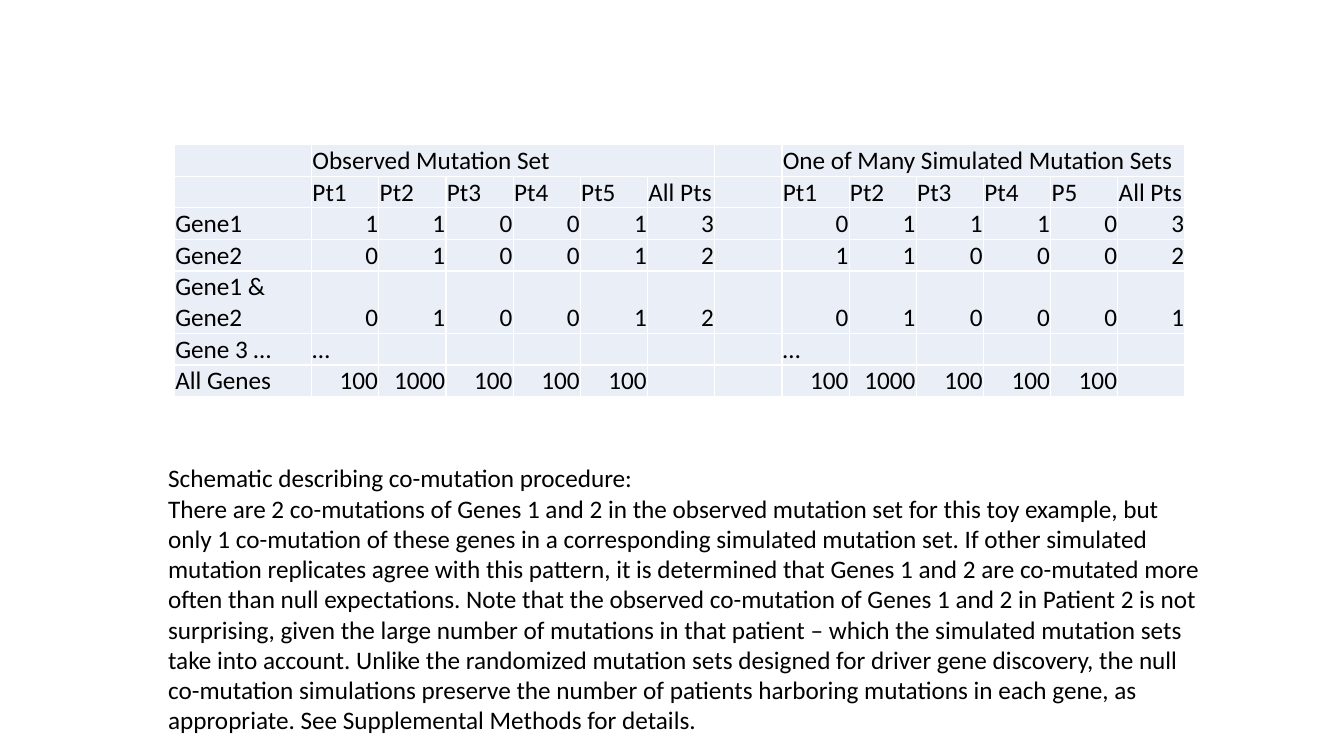
from dataclasses import dataclass

from lxml import etree
from pptx import Presentation
from pptx.dml.color import RGBColor
from pptx.enum import text
from pptx.oxml.ns import qn
from pptx.util import Pt

GROUPS = ["Observed Mutation Set", "One of Many Simulated Mutation Sets"]
# Each row: label, observed values, simulated values
ROWS = [
    ("", ["Pt1", "Pt2", "Pt3", "Pt4", "Pt5", "All Pts"],
     ["Pt1", "Pt2", "Pt3", "Pt4", "P5", "All Pts"]),
    ("Gene1", [1, 1, 0, 0, 1, 3], [0, 1, 1, 1, 0, 3]),
    ("Gene2", [0, 1, 0, 0, 1, 2], [1, 1, 0, 0, 0, 2]),
    ("Gene1 & Gene2", [0, 1, 0, 0, 1, 2], [0, 1, 0, 0, 0, 1]),
    ("Gene 3 …", ["…"] + [""] * 5, ["…"] + [""] * 5),
    ("All Genes", [100, 1000, 100, 100, 100, ""],
     [100, 1000, 100, 100, 100, ""]),
]
CAPTION = [
    "Schematic describing co-mutation procedure:",
    "There are 2 co-mutations of Genes 1 and 2 in the observed mutation set "
    "for this toy example, but only 1 co-mutation of these genes in a "
    "corresponding simulated mutation set. If other simulated mutation "
    "replicates agree with this pattern, it is determined that Genes 1 and 2 "
    "are co-mutated more often than null expectations. Note that the observed "
    "co-mutation of Genes 1 and 2 in Patient 2 is not surprising, given the "
    "large number of mutations in that patient – which the simulated mutation "
    "sets take into account. Unlike the randomized mutation sets designed for "
    "driver gene discovery, the null co-mutation simulations preserve the "
    "number of patients harboring mutations in each gene, as appropriate. See "
    "Supplemental Methods for details.",
]


@dataclass(frozen=True)
class Theme:
    font: str = "Calibri"
    size: int = 18
    ink: str = "000000"
    cell: str = "EAEFF7"
    border: str = "FFFFFF"


THEME = Theme()
SLIDE_W, SLIDE_H = 960, 540
TABLE_X, TABLE_Y, TABLE_H = 124.6, 103.2, 177.8
LABEL_W, VALUE_W, ROW_H = 98, 48, 15
CELL_INSET = 0.6
CAPTION_BOX = (113, 327, 755, 204)
GROUP_SIZE = len(ROWS[0][1])


def style_font(p):
    p.font.name = THEME.font
    p.font.size = Pt(THEME.size)
    p.font.color.rgb = RGBColor.from_string(THEME.ink)


def add_borders(cell):
    tc_pr = cell._tc.get_or_add_tcPr()
    for i, side in enumerate("LRTB"):
        ln = etree.Element(qn(f"a:ln{side}"), w=str(Pt(1)))
        fill = etree.SubElement(ln, qn("a:solidFill"))
        etree.SubElement(fill, qn("a:srgbClr"), val=THEME.border)
        tc_pr.insert(i, ln)


def fill_cell(cell, value):
    cell.margin_left = cell.margin_right = cell.margin_top = Pt(CELL_INSET)
    cell.margin_bottom = 0
    cell.vertical_anchor = text.MSO_ANCHOR.BOTTOM
    cell.fill.solid()
    cell.fill.fore_color.rgb = RGBColor.from_string(THEME.cell)
    add_borders(cell)
    p = cell.text_frame.paragraphs[0]
    p.text = str(value)
    style_font(p)
    if isinstance(value, int):
        p.alignment = text.PP_ALIGN.RIGHT


def add_mutation_table(slide):
    padding = [""] * (GROUP_SIZE - 1)
    header = ("", [GROUPS[0]] + padding, [GROUPS[1]] + padding)
    grid = [[label, *observed, "", *simulated]
            for label, observed, simulated in [header, *ROWS]]
    n_rows, n_cols = len(grid), len(grid[0])
    width = LABEL_W + VALUE_W * (n_cols - 1)
    frame = slide.shapes.add_table(n_rows, n_cols, Pt(TABLE_X), Pt(TABLE_Y),
                                   Pt(width), Pt(TABLE_H))
    table = frame.table
    table.first_row = table.horz_banding = False
    for c, column in enumerate(table.columns):
        column.width = Pt(VALUE_W if c else LABEL_W)
    for row, values in zip(table.rows, grid):
        row.height = Pt(ROW_H)
        for cell, value in zip(row.cells, values):
            fill_cell(cell, value)
    for start in (1, GROUP_SIZE + 2):
        table.cell(0, start).merge(table.cell(0, start + GROUP_SIZE - 1))
    frame.height = Pt(TABLE_H)  # rows grow to fit their text


def add_caption(slide):
    tf = slide.shapes.add_textbox(*map(Pt, CAPTION_BOX)).text_frame
    tf.word_wrap = True
    tf.auto_size = text.MSO_AUTO_SIZE.SHAPE_TO_FIT_TEXT
    tf.text = "\n".join(CAPTION)
    for p in tf.paragraphs:
        style_font(p)


def main():
    prs = Presentation()
    prs.slide_width, prs.slide_height = Pt(SLIDE_W), Pt(SLIDE_H)
    slide = prs.slides.add_slide(prs.slide_layouts[6])
    add_mutation_table(slide)
    add_caption(slide)
    prs.save("out.pptx")


if __name__ == "__main__":
    main()
